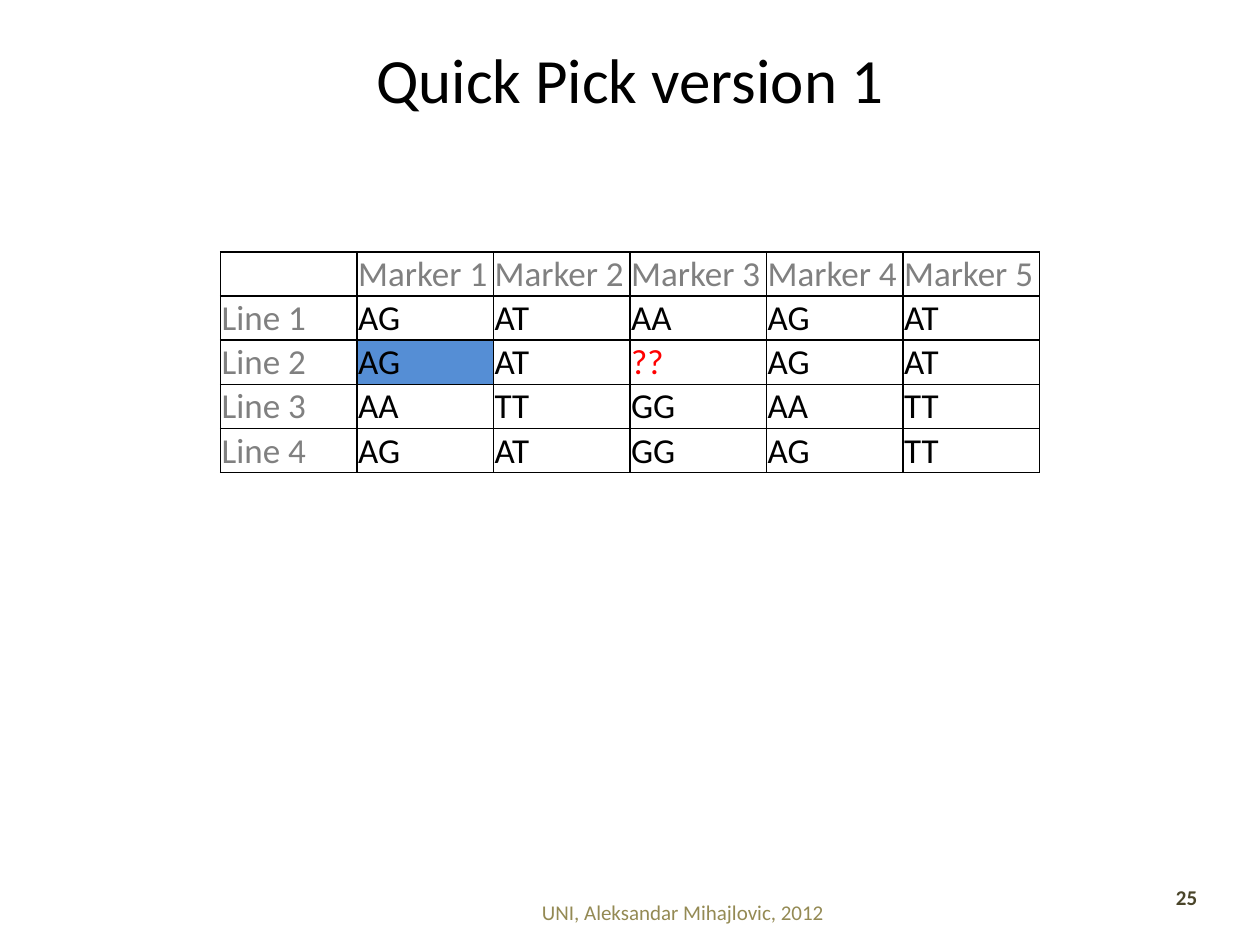
from lxml import etree
from pptx import Presentation
from pptx import util as u
from pptx.dml.color import RGBColor
from pptx.enum import text
from pptx.oxml import ns

BLACK = RGBColor(0x00, 0x00, 0x00)
GREY = RGBColor(0x80, 0x80, 0x80)
RED = RGBColor(0xFF, 0x00, 0x00)
BLUE = RGBColor(0x55, 0x8E, 0xD5)
TAN = RGBColor(0x94, 0x8A, 0x54)
BROWN = RGBColor(0x4A, 0x45, 0x2A)

GENOTYPES = [
    ["AG", "AT", "AA", "AG", "AT"],
    ["AG", "AT", "??", "AG", "AT"],
    ["AA", "TT", "GG", "AA", "TT"],
    ["AG", "AT", "GG", "AG", "TT"],
]
PICKED = (2, 1)  # row and column of the highlighted cell


class SlideBuilder:
    font = "Calibri"

    def __init__(self, slide):
        self.s = slide

    def set_text(self, tf, words, size, color, align, bold=False):
        tf.text = words
        p = tf.paragraphs[0]
        p.alignment = align
        for r in p.runs:
            r.font.name = self.font
            r.font.size = u.Pt(size)
            r.font.bold = bold
            r.font.color.rgb = color

    def title(self, words, *box):
        sp = self.s.shapes.title
        sp.left, sp.top, sp.width, sp.height = map(u.Inches, box)
        sp.text_frame.vertical_anchor = text.MSO_ANCHOR.MIDDLE
        self.set_text(sp.text_frame, words, 36, BLACK, text.PP_ALIGN.CENTER)

    def label(self, words, box, color, align, anchor, bold=False):
        tf = self.s.shapes.add_textbox(*map(u.Inches, box)).text_frame
        tf.word_wrap = True
        tf.vertical_anchor = anchor
        self.set_text(tf, words, 12, color, align, bold)

    def borders(self, cell):
        tcPr = cell._tc.get_or_add_tcPr()
        for side in ("lnL", "lnR", "lnT", "lnB"):
            ln = etree.SubElement(tcPr, ns.qn("a:" + side), w=str(u.Pt(1)))
            fill = etree.SubElement(ln, ns.qn("a:solidFill"))
            etree.SubElement(fill, ns.qn("a:srgbClr"), val=str(BLACK))

    def table(self, rows, *box):
        frame = self.s.shapes.add_table(len(rows), len(rows[0]), *map(u.Inches, box))
        table = frame.table
        table.first_row = table.horz_banding = False
        for i, row in enumerate(rows):
            for j, words in enumerate(row):
                cell = table.cell(i, j)
                cell.margin_left = cell.margin_right = cell.margin_top = u.Inches(0.01)
                cell.margin_bottom = 0
                cell.vertical_anchor = text.MSO_ANCHOR.BOTTOM
                self.borders(cell)
                if (i, j) == PICKED:
                    cell.fill.solid()
                    cell.fill.fore_color.rgb = BLUE
                else:
                    cell.fill.background()
                color = GREY if i == 0 or j == 0 else RED if words == "??" else BLACK
                self.set_text(cell.text_frame, words, 20, color, text.PP_ALIGN.LEFT)


def main():
    prs = Presentation()
    prs.slide_width, prs.slide_height = u.Inches(10), u.Inches(7.5)
    b = SlideBuilder(prs.slides.add_slide(prs.slide_layouts[5]))

    # Title
    b.title("Quick Pick version 1", 0.5, 0, 9, 1.25)

    # Footer and slide number
    b.label("UNI, Aleksandar Mihajlovic, 2012", (2.53, 7.04, 5.78, 0.39), TAN,
            text.PP_ALIGN.CENTER, text.MSO_ANCHOR.MIDDLE)
    b.label("25", (8.71, 6.97, 0.89, 0.39), BROWN,
            text.PP_ALIGN.RIGHT, text.MSO_ANCHOR.TOP, bold=True)

    # Marker table
    header = [""] + [f"Marker {n}" for n in range(1, 6)]
    lines = [[f"Line {n}"] + row for n, row in enumerate(GENOTYPES, 1)]
    b.table([header] + lines, 1.75, 2, 6.5, 1.75)

    prs.save("out.pptx")


if __name__ == "__main__":
    main()
